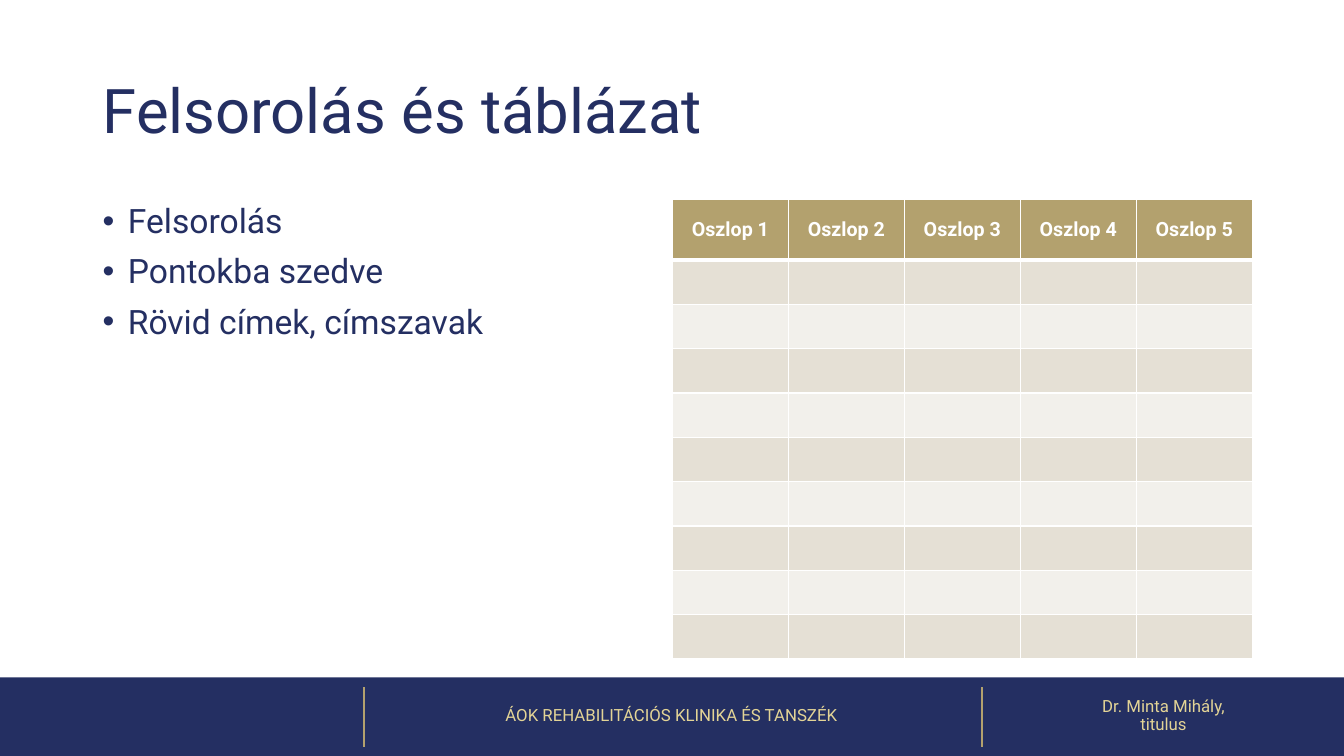
from dataclasses import dataclass

from lxml.etree import SubElement
from pptx import Presentation
from pptx.dml.color import RGBColor
from pptx.enum.shapes import MSO_CONNECTOR, MSO_SHAPE
from pptx.enum.text import MSO_ANCHOR, PP_ALIGN
from pptx.oxml.ns import qn
from pptx.slide import Slide
from pptx.table import _Cell
from pptx.text.text import _Paragraph
from pptx.util import Inches, Pt


@dataclass(frozen=True)
class Theme:
    font: str = "Roboto"
    navy: str = "242F62"
    gold: str = "B3A16E"
    pale_gold: str = "E3D496"
    white: str = "FFFFFF"
    bands: tuple[str, str] = ("E5E0D5", "F2F0EB")
    title_size: int = 44
    body_size: int = 24
    header_size: int = 14
    footer_size: int = 12


THEME = Theme()


@dataclass(frozen=True)
class TextBlock:
    paragraphs: tuple[str, ...]
    left: float
    top: float
    width: float
    height: float
    size: int
    color: str
    alignment: PP_ALIGN = PP_ALIGN.LEFT
    anchor: MSO_ANCHOR = MSO_ANCHOR.MIDDLE
    bulleted: bool = False


TEXT_BLOCKS = (
    TextBlock(("ÁOK REHABILITÁCIÓS KLINIKA ÉS TANSZÉK",), 3.59, 6.71, 6.14, 0.79,
              THEME.footer_size, THEME.pale_gold, PP_ALIGN.CENTER),
    TextBlock(("Dr. Minta Mihály,\ntitulus",), 9.74, 6.71, 3.6, 0.79,
              THEME.footer_size, THEME.pale_gold, PP_ALIGN.CENTER),
    TextBlock(("Felsorolás és táblázat",), 0.92, 0.4, 11.5, 1.45,
              THEME.title_size, THEME.navy),
    TextBlock(("Felsorolás", "Pontokba szedve", "Rövid címek, címszavak"),
              0.92, 1.98, 5.67, 4.53, THEME.body_size, THEME.navy,
              anchor=MSO_ANCHOR.TOP, bulleted=True),
)
DIVIDER_POSITIONS = (3.61, 9.74)
COLUMN_COUNT = 5
BODY_ROW_COUNT = 9
COLUMN_WIDTH = 1.15
HEADER_HEIGHT = 0.6
ROW_HEIGHT = 0.44


def rgb(color: str) -> RGBColor:
    return RGBColor.from_string(color)


def format_runs(paragraph: _Paragraph, size: int, color: str, bold: bool = False) -> None:
    for run in paragraph.runs:
        run.font.name = THEME.font
        run.font.size = Pt(size)
        run.font.bold = bold
        run.font.color.rgb = rgb(color)
    for line_break in paragraph._p.findall(qn("a:br")):
        SubElement(line_break, qn("a:rPr"), sz=str(size * 100))


def add_bullet(paragraph: _Paragraph) -> None:
    properties = paragraph._p.get_or_add_pPr()
    properties.set("marL", str(Inches(0.25)))
    properties.set("indent", str(Inches(-0.25)))
    SubElement(properties, qn("a:buFont"), typeface="Arial")
    SubElement(properties, qn("a:buChar"), char="•")


def add_text(slide: Slide, block: TextBlock) -> None:
    box = slide.shapes.add_textbox(Inches(block.left), Inches(block.top),
                                   Inches(block.width), Inches(block.height))
    text_frame = box.text_frame
    text_frame.word_wrap = True
    text_frame.vertical_anchor = block.anchor
    for index, text in enumerate(block.paragraphs):
        paragraph = text_frame.add_paragraph() if index else text_frame.paragraphs[0]
        paragraph.text = text
        paragraph.alignment = block.alignment
        paragraph.line_spacing = 0.9
        if index:
            paragraph.space_before = Pt(10)
        if block.bulleted:
            add_bullet(paragraph)
        format_runs(paragraph, block.size, block.color)


def add_footer_band(slide: Slide) -> None:
    band = slide.shapes.add_shape(MSO_SHAPE.RECTANGLE, 0, Inches(6.72),
                                  Inches(13.33), Inches(0.79))
    band.shadow.inherit = False
    band.fill.solid()
    band.fill.fore_color.rgb = rgb(THEME.navy)
    band.line.fill.background()


def add_divider(slide: Slide, left: float) -> None:
    divider = slide.shapes.add_connector(MSO_CONNECTOR.STRAIGHT, Inches(left), Inches(6.82),
                                         Inches(left), Inches(7.41))
    divider.line.color.rgb = rgb(THEME.gold)
    divider.line.width = Pt(1.5)
    SubElement(divider._element.spPr, qn("a:effectLst"))


def style_cell(cell: _Cell, fill: str, top_width: int, bottom_width: int) -> None:
    """Draw the white borders (widths in points), then fill the cell."""
    properties = cell._tc.get_or_add_tcPr()
    for side, width in (("L", 1), ("R", 1), ("T", top_width), ("B", bottom_width)):
        border = SubElement(properties, qn(f"a:ln{side}"), w=str(Pt(width)))
        border_fill = SubElement(border, qn("a:solidFill"))
        SubElement(border_fill, qn("a:srgbClr"), val=THEME.white)
    cell.fill.solid()
    cell.fill.fore_color.rgb = rgb(fill)


def add_column_table(slide: Slide) -> None:
    frame = slide.shapes.add_table(
        BODY_ROW_COUNT + 1, COLUMN_COUNT, Inches(6.67), Inches(1.98),
        Inches(COLUMN_COUNT * COLUMN_WIDTH),
        Inches(HEADER_HEIGHT + BODY_ROW_COUNT * ROW_HEIGHT))
    table = frame.table
    for column in table.columns:
        column.width = Inches(COLUMN_WIDTH)
    for row_index, row in enumerate(table.rows):
        is_header = row_index == 0
        row.height = Inches(HEADER_HEIGHT if is_header else ROW_HEIGHT)
        fill = THEME.gold if is_header else THEME.bands[(row_index - 1) % 2]
        for column_number, cell in enumerate(row.cells, start=1):
            style_cell(cell, fill, 3 if row_index == 1 else 1, 3 if is_header else 1)
            if is_header:
                cell.vertical_anchor = MSO_ANCHOR.MIDDLE
                paragraph = cell.text_frame.paragraphs[0]
                paragraph.text = f"Oszlop {column_number}"
                paragraph.alignment = PP_ALIGN.CENTER
                format_runs(paragraph, THEME.header_size, THEME.white, bold=True)


def main() -> None:
    presentation = Presentation()
    presentation.slide_width = Inches(13.33)
    presentation.slide_height = Inches(7.5)
    slide = presentation.slides.add_slide(presentation.slide_layouts[6])
    add_footer_band(slide)
    for left in DIVIDER_POSITIONS:
        add_divider(slide, left)
    for block in TEXT_BLOCKS:
        add_text(slide, block)
    add_column_table(slide)
    presentation.save("out.pptx")


if __name__ == "__main__":
    main()
